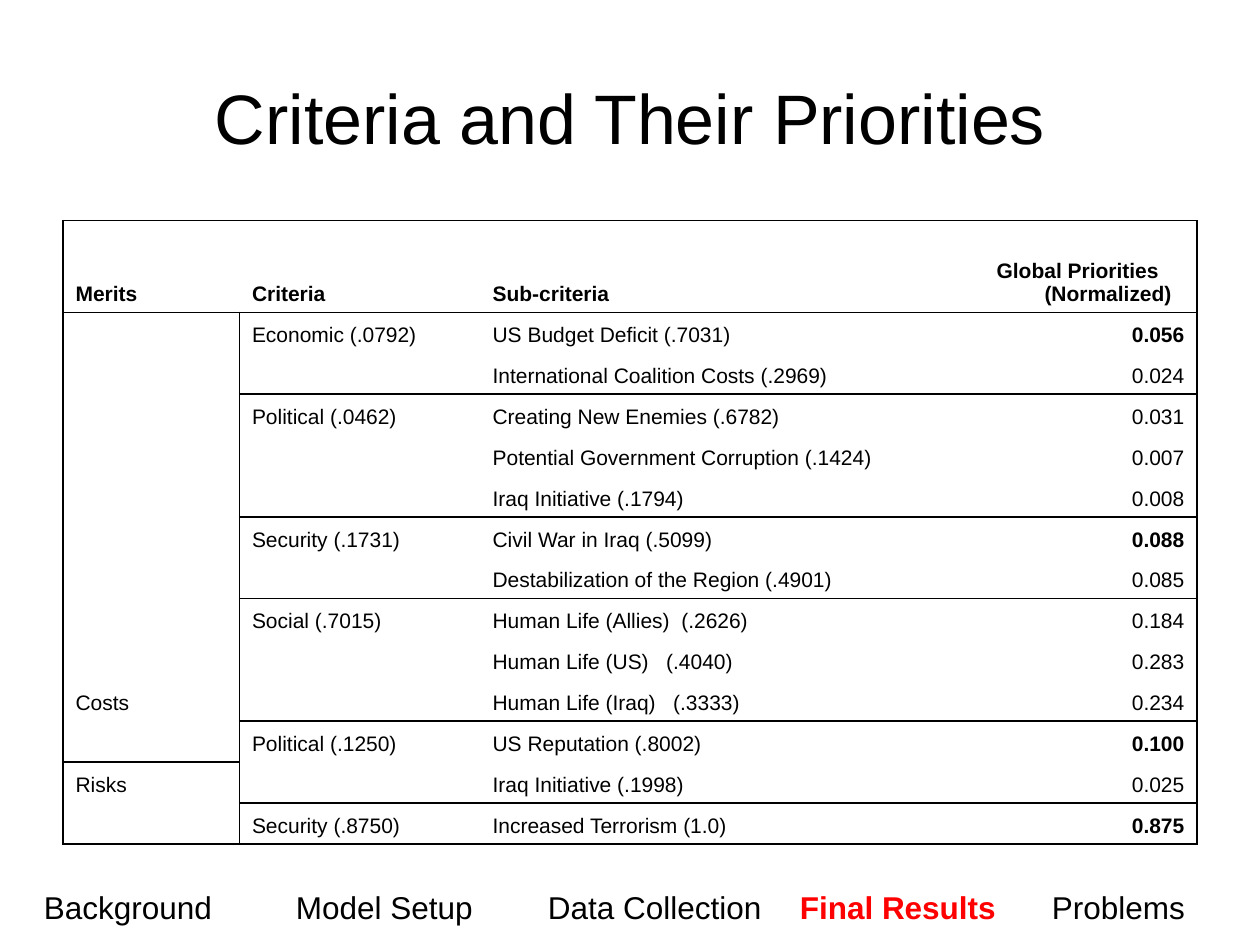
import dataclasses

import pptx
import pptx.dml.color
import pptx.enum.text
import pptx.oxml.ns
import pptx.util
from lxml import etree

Inches, Pt = pptx.util.Inches, pptx.util.Pt
PP_ALIGN = pptx.enum.text.PP_ALIGN
ANCHOR = pptx.enum.text.MSO_ANCHOR
qn = pptx.oxml.ns.qn


@dataclasses.dataclass(frozen=True)
class Theme:
    font: str = "Arial"
    ink: str = "000000"
    accent: str = "FF0000"
    paper: str = "FFFFFF"
    title: int = 40
    nav: int = 18
    cell: int = 12
    line: int = 1


THEME = Theme()
TITLE = "Criteria and Their Priorities"
HEADERS = ["Merits", "Criteria", "Sub-criteria", "Global Priorities (Normalized)"]
MERITS = [("Costs", 11), ("Risks", 2)]  # name, number of rows
CRITERIA = [
    ("Economic (.0792)", [("US Budget Deficit (.7031)", "0.056"),
                          ("International Coalition Costs (.2969)", "0.024")]),
    ("Political (.0462)", [("Creating New Enemies (.6782)", "0.031"),
                           ("Potential Government Corruption (.1424)", "0.007"),
                           ("Iraq Initiative (.1794)", "0.008")]),
    ("Security (.1731)", [("Civil War in Iraq (.5099)", "0.088"),
                          ("Destabilization of the Region (.4901)", "0.085")]),
    ("Social (.7015)", [("Human Life (Allies)  (.2626)", "0.184"),
                        ("Human Life (US)   (.4040)", "0.283"),
                        ("Human Life (Iraq)   (.3333)", "0.234")]),
    ("Political (.1250)", [("US Reputation (.8002)", "0.100"),
                           ("Iraq Initiative (.1998)", "0.025")]),
    ("Security (.8750)", [("Increased Terrorism (1.0)", "0.875")]),
]
KEY_VALUES = {"0.056", "0.088", "0.100", "0.875"}
SECTIONS = ["Background", "Model Setup", "Data Collection", "Final Results", "Problems"]
CURRENT = "Final Results"

WIDTH, HEIGHT, MARGIN = 10, 7.5, 0.5
COLUMNS = [1.4, 1.91, 4, 1.69]
TABLE_TOP, TABLE_HEIGHT, HEADER_HEIGHT = 1.75, 4.95, 0.73
HANG = 0.38
TAB_STEP = 2


def style(span, size, color=THEME.ink, bold=False):
    span.font.name, span.font.size, span.font.bold = THEME.font, Pt(size), bold
    span.font.color.rgb = pptx.dml.color.RGBColor.from_string(color)


def set_borders(cell, sides):
    """Draw the named sides of a cell and leave the others without a line."""
    properties = cell._tc.get_or_add_tcPr()
    for side in "LRTB":
        line = etree.SubElement(properties, qn(f"a:ln{side}"), w=str(Pt(THEME.line)))
        if side in sides:
            fill = etree.SubElement(line, qn("a:solidFill"))
            etree.SubElement(fill, qn("a:srgbClr"), val=THEME.ink)
        else:
            etree.SubElement(line, qn("a:noFill"))


def fill_cell(cell, text, bold, align):
    cell.fill.solid()
    cell.fill.fore_color.rgb = pptx.dml.color.RGBColor.from_string(THEME.paper)
    cell.vertical_anchor = ANCHOR.BOTTOM
    para = cell.text_frame.paragraphs[0]
    if not text:
        etree.SubElement(para._p, qn("a:endParaRPr"), sz=str(THEME.cell * 100))
        return
    para.text = text
    para.alignment = align
    indent = para._p.get_or_add_pPr()
    indent.set("marL", str(Inches(HANG)))
    indent.set("indent", str(-Inches(HANG)))
    style(para.runs[0], THEME.cell, bold=bold)


def table_rows():
    """Return the rows of text, with each group name on its first row only."""
    merits = [name if i == 0 else "" for name, count in MERITS for i in range(count)]
    body = [(name if i == 0 else "", sub, value)
            for name, subs in CRITERIA for i, (sub, value) in enumerate(subs)]
    return [HEADERS] + [[merit, *rest] for merit, rest in zip(merits, body)]


def add_priorities(page):
    rows = table_rows()
    last_row, last_column = len(rows) - 1, len(COLUMNS) - 1
    table = page.shapes.add_table(
        len(rows), len(COLUMNS), Inches(MARGIN), Inches(TABLE_TOP),
        Inches(sum(COLUMNS)), Inches(TABLE_HEIGHT)).table
    table.first_row = table.horz_banding = False
    for column, width in zip(table.columns, COLUMNS):
        column.width = Inches(width)
    for r, row in enumerate(table.rows):
        row.height = Inches(HEADER_HEIGHT if r == 0
                            else (TABLE_HEIGHT - HEADER_HEIGHT) / last_row)
    for r, texts in enumerate(rows):
        for c, text in enumerate(texts):
            group = min(c, 1)  # merits have their own rules, the rest follow the criteria
            sides = {
                "L": c == 0 or (c == 1 and r > 0),
                "R": c == last_column or (c == 0 and r > 0),
                "T": bool(rows[r][group]),
                "B": r == last_row or bool(rows[r + 1][group]),
            }
            cell = table.cell(r, c)
            set_borders(cell, [side for side, drawn in sides.items() if drawn])
            value = c == last_column and r > 0
            fill_cell(cell, text, r == 0 or text in KEY_VALUES,
                      PP_ALIGN.RIGHT if value else PP_ALIGN.LEFT)
    table.cell(1, 0).merge(table.cell(MERITS[0][1] - 1, 0))


def add_navigation(page):
    box = page.shapes.add_textbox(Inches(MARGIN / 2), Inches(7),
                                  Inches(WIDTH - MARGIN), Inches(0.4))
    box.text_frame.word_wrap = True
    para = box.text_frame.paragraphs[0]
    stops = etree.SubElement(para._p.get_or_add_pPr(), qn("a:tabLst"))
    for i, section in enumerate(SECTIONS):
        if i:
            etree.SubElement(stops, qn("a:tab"), pos=str(Inches(TAB_STEP * i)), algn="l")
            tab = para.add_run()
            tab.text = "\t"
            style(tab, THEME.nav)
        span = para.add_run()
        span.text = section
        current = section == CURRENT
        style(span, THEME.nav, THEME.accent if current else THEME.ink, current)


def main():
    deck = pptx.Presentation()
    deck.slide_width, deck.slide_height = Inches(WIDTH), Inches(HEIGHT)
    page = deck.slides.add_slide(deck.slide_layouts[5])
    title = page.shapes.title
    title.left, title.top = Inches(MARGIN), Inches(0.3)
    title.width, title.height = Inches(WIDTH - 2 * MARGIN), Inches(1.25)
    title.text_frame.text = TITLE
    title.text_frame.vertical_anchor = ANCHOR.MIDDLE
    para = title.text_frame.paragraphs[0]
    para.alignment = PP_ALIGN.CENTER
    style(para.runs[0], THEME.title)
    add_priorities(page)
    add_navigation(page)
    deck.save("out.pptx")


if __name__ == "__main__":
    main()
